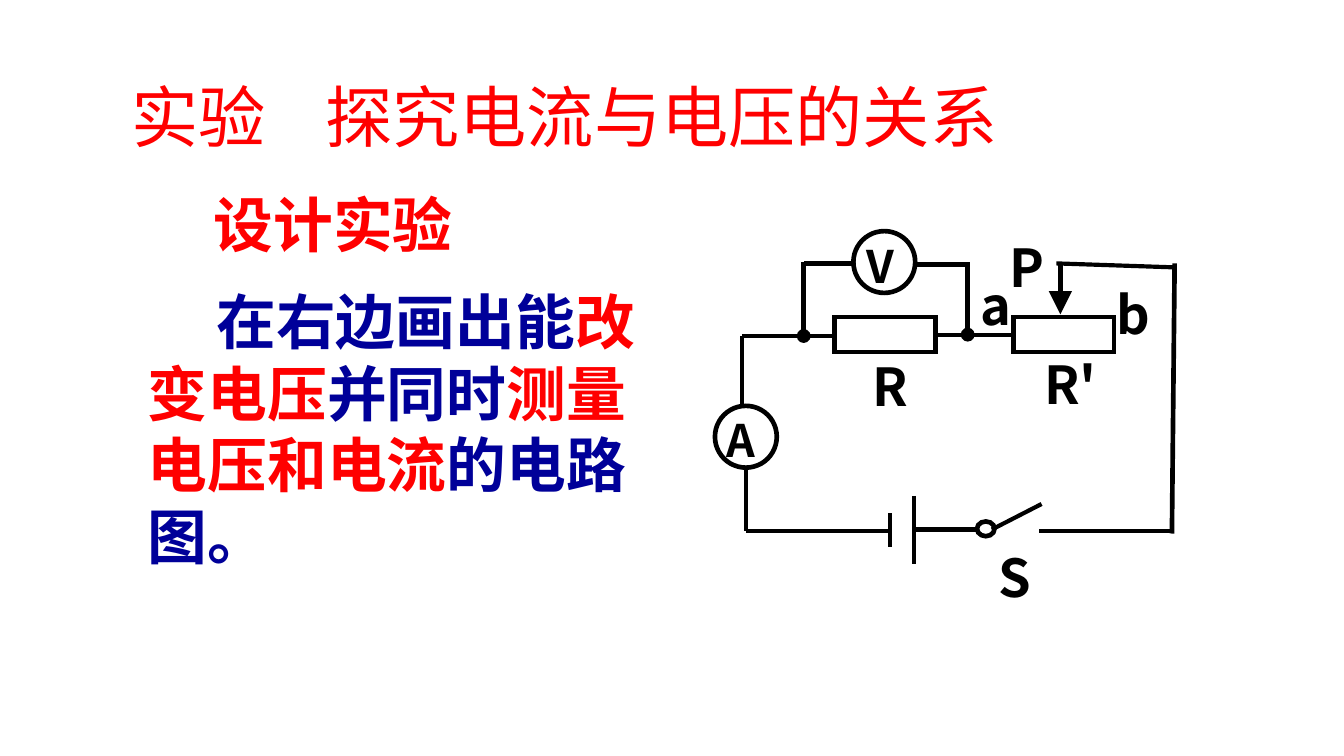
from pptx import Presentation
from pptx.dml.color import RGBColor
from pptx.enum.shapes import MSO_CONNECTOR, MSO_SHAPE
from pptx.enum.text import MSO_ANCHOR, MSO_AUTO_SIZE, PP_ALIGN
from pptx.oxml.ns import qn
from pptx.util import Inches, Pt
from lxml.etree import SubElement

FONT = "Noto Sans CJK SC"
RED, BLUE, BLACK = "FF0000", "000099", "000000"

TITLE = [("实验\t探究电流与电压的关系", RED)]
HEAD = [("设计实验", RED)]
BODY = [
    ("在右边画出能", BLUE),
    ("改变电压", RED),
    ("并同时", BLUE),
    ("测量电压和电流", RED),
    ("的电路图。", BLUE),
]
THIN, THICK = 2.25, 2.5
WIRES = [
    (8.75, 1.99, 7.86, 1.96, THIN, None),
    (6.8, 3.69, 6.8, 4.2, THIN, None),
    (7.75, 3.75, 7.38, 3.94, THIN, None),
    (7.27, 3.94, 6.8, 3.94, THIN, None),
    (6.62, 3.82, 6.62, 4.07, THIN, None),
    (8.72, 3.95, 7.73, 3.95, THIN, None),
    (5.55, 3.95, 6.62, 3.95, THICK, None),
    (6.22, 2.5, 5.52, 2.5, THIN, None),
    (8.72, 3.97, 8.74, 1.96, THICK, None),
    (5.98, 2.5, 5.98, 1.95, THICK, "oval"),
    (6.35, 1.96, 5.98, 1.96, THICK, None),
    (7.2, 1.97, 6.8, 1.97, THICK, None),
    (7.2, 2.49, 7.2, 1.95, THICK, "oval"),
    (7.54, 2.49, 6.96, 2.49, THIN, None),
    (5.52, 3.03, 5.52, 2.5, THICK, None),
    (5.55, 3.95, 5.55, 3.47, THICK, None),
    (7.89, 2.34, 7.89, 1.95, THICK, "triangle"),
]
TIPS = {"oval": "med", "triangle": "lg"}
PARTS = [
    (MSO_SHAPE.OVAL, 7.27, 3.88, 0.13, 0.11),
    (MSO_SHAPE.OVAL, 6.35, 1.72, 0.46, 0.46),
    (MSO_SHAPE.OVAL, 5.32, 3.02, 0.46, 0.46),
    (MSO_SHAPE.RECTANGLE, 6.21, 2.36, 0.75, 0.26),
    (MSO_SHAPE.RECTANGLE, 7.54, 2.36, 0.75, 0.26),
]
LABELS = [
    ("V", 6.35, 1.68, 0.46, 0.55, 24),
    ("A", 5.31, 2.97, 0.46, 0.55, 24),
    ("R", 6.39, 2.53, 0.57, 0.62, 28),
    ("R'", 7.67, 2.52, 0.68, 0.62, 28),
    ("P", 7.41, 1.65, 0.57, 0.62, 28),
    ("S", 7.33, 3.95, 0.57, 0.62, 28),
    ("a", 7.2, 1.93, 0.57, 0.62, 28),
    ("b", 8.21, 2, 0.57, 0.62, 28),
]


def color(text):
    return RGBColor.from_string(text)


def write(box, runs, size, pitch, bold=True, inset=(0.1, 0.05), indent=0, tab=0):
    frame = box.text_frame
    frame.word_wrap = True
    frame.auto_size = MSO_AUTO_SIZE.NONE
    frame.vertical_anchor = MSO_ANCHOR.MIDDLE
    frame.margin_left = frame.margin_right = Inches(inset[0])
    frame.margin_top = frame.margin_bottom = Inches(inset[1])
    para = frame.paragraphs[0]
    para.alignment = PP_ALIGN.LEFT
    para.line_spacing = Pt(pitch)
    props = para._p.get_or_add_pPr()
    if indent:
        props.set("marL", "0")
        props.set("indent", str(Inches(indent)))
    if tab:
        stops = SubElement(props, qn("a:tabLst"))
        SubElement(stops, qn("a:tab"), pos=str(Inches(tab)), algn="l")
    for text, tint in runs:
        run = para.add_run()
        run.text = text
        font = run.font
        font.size, font.bold, font.name = Pt(size), bold, FONT
        font.color.rgb = color(tint)
        SubElement(run._r.get_or_add_rPr(), qn("a:ea"), typeface=FONT)


def label(shapes, place, runs, size, pitch, **style):
    write(shapes.add_textbox(*map(Inches, place)), runs, size, pitch, **style)


def stroke(shape, width):
    line = shape.line
    line.color.rgb = color(BLACK)
    line.width = Pt(width)
    return line._get_or_add_ln()


def wire(shapes, ends, width, tip):
    link = shapes.add_connector(MSO_CONNECTOR.STRAIGHT, *map(Inches, ends))
    edge = stroke(link, width)
    if tip:
        SubElement(edge, qn("a:headEnd"), type=tip, w=TIPS[tip], len=TIPS[tip])
    SubElement(link._element.spPr, qn("a:effectLst"))


def part(shapes, kind, place):
    shape = shapes.add_shape(kind, *map(Inches, place))
    shape.shadow.inherit = False
    shape.fill.background()
    SubElement(stroke(shape, THICK), qn("a:miter"), lim="800000")


def main():
    """Build the circuit design slide."""
    deck = Presentation()
    deck.slide_width = Inches(10)
    deck.slide_height = deck.slide_width * 9 // 16
    slide = deck.slides.add_slide(deck.slide_layouts[5])
    title = slide.shapes.title
    title.left, title.top = Inches(0.88), Inches(0.46)
    title.width, title.height = Inches(7.4), Inches(0.71)
    write(title, TITLE, 36, 50, bold=False, tab=1.44)

    style = {"inset": (0.07, 0.04), "indent": 0.51}
    label(slide.shapes, (1.01, 1.36, 4.23, 0.61), HEAD, 32, 38.5, **style)
    label(slide.shapes, (1.03, 2.07, 3.93, 2.23), BODY, 32, 38.5, **style)

    circuit = slide.shapes.add_group_shape().shapes
    for *ends, width, tip in WIRES:
        wire(circuit, ends, width, tip)
    for kind, *place in PARTS:
        part(circuit, kind, place)
    for text, *place, size in LABELS:
        label(circuit, place, [(text, BLACK)], size, round(size * 1.34, 1))
    deck.save("out.pptx")


if __name__ == "__main__":
    main()
